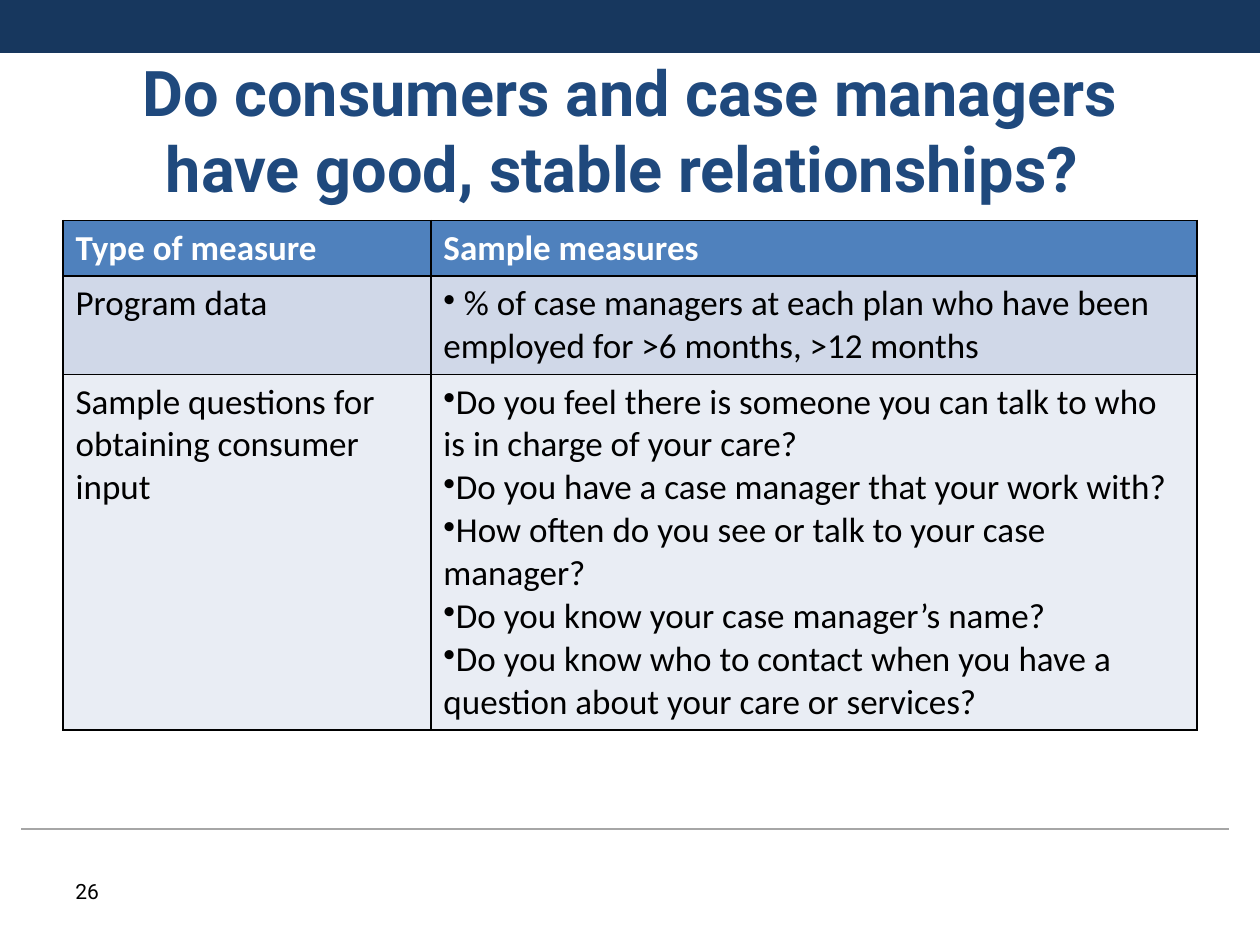
from lxml.etree import SubElement
from pptx import Presentation
from pptx.dml.color import RGBColor
from pptx.enum.shapes import MSO_CONNECTOR, MSO_SHAPE
from pptx.enum.text import MSO_ANCHOR, MSO_AUTO_SIZE, PP_ALIGN
from pptx.oxml.ns import qn
from pptx.util import Inches, Pt

TITLE = "Do consumers and case managers have good, stable relationships? "
PAGE_NUMBER = "26"
HEADER = ("Type of measure", "Sample measures")
MEASURES = [
    ("Program data", [
        " % of case managers at each plan who have been employed for >6 months, >12 months",
    ]),
    ("Sample questions for obtaining consumer input", [
        "Do you feel there is someone you can talk to who is in charge of your care?",
        "Do you have a case manager that your work with?",
        "How often do you see or talk to your case manager?",
        "Do you know your case manager’s name?",
        "Do you know who to contact when you have a question about your care or services?",
    ]),
]
ROW_FILLS = ("4F81BD", "D0D8E8", "E9EDF4")
ROW_HEIGHTS = (0.41, 0.74, 2.82)
COLUMN_WIDTHS = (2.92, 6.08)
MARGIN = 0.5
WIDTH, HEIGHT = 10, 7.5
CONTENT_WIDTH = WIDTH - 2 * MARGIN


def color(value):
    return RGBColor.from_string(value)


def inches(*lengths):
    return [Inches(length) for length in lengths]


def style_runs(para, font, size, hex_color, bold=False):
    for span in para.runs:
        span.font.name, span.font.size, span.font.bold = font, Pt(size), bold
        span.font.color.rgb = color(hex_color)


def add_bullet(para):
    properties = para._p.get_or_add_pPr()
    properties.set("marL", "0")
    properties.set("indent", "0")
    SubElement(properties, qn("a:buChar"), char="•")


def add_borders(cell):
    properties = cell._tc.get_or_add_tcPr()
    for side in "LRTB":
        border = SubElement(properties, qn(f"a:ln{side}"), w=str(Pt(1)))
        fill = SubElement(border, qn("a:solidFill"))
        SubElement(fill, qn("a:srgbClr"), val="000000")


def fill_cell(cell, lines, fill, is_header, bulleted):
    add_borders(cell)
    cell.fill.solid()
    cell.fill.fore_color.rgb = color(fill)
    cell.text_frame.text = "\n".join(lines)
    for para in cell.text_frame.paragraphs:
        if bulleted:
            add_bullet(para)
        style_runs(para, "Calibri", 20, "FFFFFF" if is_header else "000000", is_header)


def add_measures_table(page):
    rows = [[[label] for label in HEADER]]
    rows += [[[kind], measures] for kind, measures in MEASURES]
    table = page.shapes.add_table(
        len(rows), len(HEADER),
        *inches(MARGIN, 1.75, CONTENT_WIDTH, sum(ROW_HEIGHTS))).table
    for column, width in zip(table.columns, COLUMN_WIDTHS):
        column.width = Inches(width)
    for r, row in enumerate(rows):
        table.rows[r].height = Inches(ROW_HEIGHTS[r])
        for c, lines in enumerate(row):
            fill_cell(table.cell(r, c), lines, ROW_FILLS[r], r == 0, r > 0 and c == 1)


def add_frame(page):
    """Draw the top band and the footer rule."""
    band = page.shapes.add_shape(MSO_SHAPE.RECTANGLE, *inches(0, 0, WIDTH, 0.42))
    band.shadow.inherit = False
    band.fill.solid()
    band.fill.fore_color.rgb = color("17375E")
    band.line.fill.background()
    rule = page.shapes.add_connector(MSO_CONNECTOR.STRAIGHT, *inches(0.17, 6.58, 9.75, 6.58))
    rule.line.color.rgb = color("A6A6A6")
    rule.line.width = Pt(0.75)
    SubElement(rule._element.spPr, qn("a:effectLst"))


def add_title(page):
    title = page.shapes.title
    title.left, title.top, title.width, title.height = inches(MARGIN, 0.5, CONTENT_WIDTH, 1.05)
    frame = title.text_frame
    frame.text = TITLE
    frame.word_wrap = True
    frame.auto_size = MSO_AUTO_SIZE.NONE
    frame.vertical_anchor = MSO_ANCHOR.MIDDLE
    para = frame.paragraphs[0]
    para.alignment = PP_ALIGN.CENTER
    style_runs(para, "Roboto", 36, "1F497D", True)


def add_page_number(page):
    box = page.shapes.add_textbox(*inches(MARGIN, 6.92, 1.25, 0.4))
    box.text_frame.word_wrap = True
    box.text_frame.text = PAGE_NUMBER
    style_runs(box.text_frame.paragraphs[0], "Roboto", 12, "000000")


def main():
    deck = Presentation()
    deck.slide_width, deck.slide_height = inches(WIDTH, HEIGHT)
    page = deck.slides.add_slide(deck.slide_layouts.get_by_name("Title Only"))
    add_frame(page)
    add_title(page)
    add_measures_table(page)
    add_page_number(page)
    deck.save("out.pptx")


if __name__ == "__main__":
    main()
